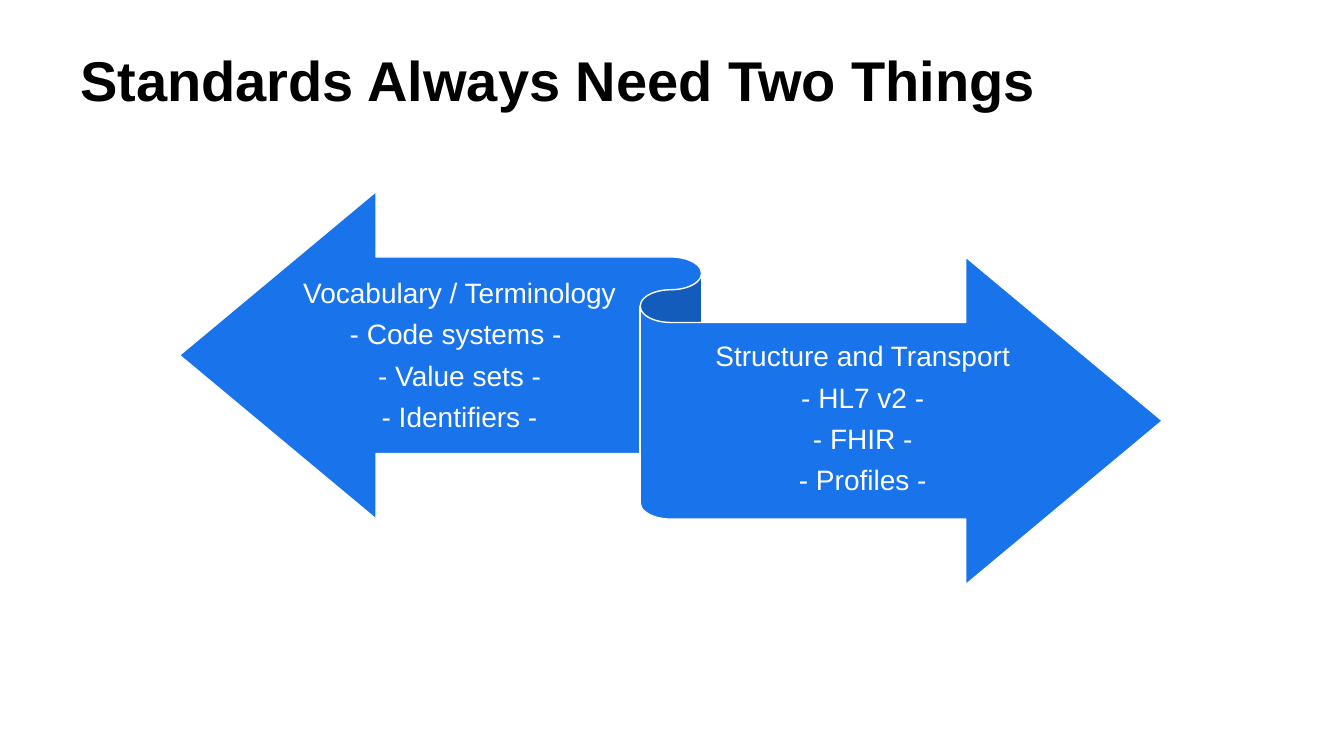
from dataclasses import dataclass

import pptx
import pptx.dml.color
import pptx.enum.shapes
import pptx.enum.text
import pptx.util

Pt = pptx.util.Pt
Align = pptx.enum.text.PP_ALIGN
Anchor = pptx.enum.text.MSO_ANCHOR


@dataclass(frozen=True)
class TextBlock:
    """Lines of text and their look; lengths in points."""
    lines: tuple[str, ...]
    left: float
    top: float
    width: float
    height: float
    size: float = 20
    color: str = "FFFFFF"
    bold: bool = False
    align: Align = Align.CENTER
    anchor: Anchor = Anchor.MIDDLE
    side_inset: float = 0
    end_inset: float = 5.76
    line_spacing: float = 0.9
    space_after: float = 7.9


TITLE = TextBlock(
    ("Standards Always Need Two Things",), 50.4, 28.8, 857.5, 86.4,
    size=40, color="000000", bold=True, align=Align.LEFT, anchor=Anchor.TOP,
    side_inset=7.2, end_inset=3.6, line_spacing=1, space_after=0,
)
ARROW_TEXTS = (
    TextBlock(
        ("Vocabulary / Terminology", "- Code systems - ", "- Value sets -", "- Identifiers -"),
        212.4, 185.8, 231.8, 137.5,
    ),
    TextBlock(
        ("Structure and Transport", "- HL7 v2 -", "- FHIR -", "- Profiles -"),
        479.5, 231.1, 273.6, 137.5,
    ),
)


def rgb(value: str) -> pptx.dml.color.RGBColor:
    return pptx.dml.color.RGBColor.from_string(value)


def set_all(target: object, values: dict[str, object]) -> None:
    for name, value in values.items():
        setattr(target, name, value)


def add_text(shapes, block: TextBlock) -> None:
    box = shapes.add_textbox(Pt(block.left), Pt(block.top), Pt(block.width), Pt(block.height))
    frame = box.text_frame
    set_all(frame, {
        "word_wrap": True,
        "vertical_anchor": block.anchor,
        "margin_left": Pt(block.side_inset),
        "margin_right": Pt(block.side_inset),
        "margin_top": Pt(block.end_inset),
        "margin_bottom": Pt(block.end_inset),
    })
    for index, line in enumerate(block.lines):
        para = frame.add_paragraph() if index else frame.paragraphs[0]
        set_all(para, {
            "alignment": block.align,
            "line_spacing": block.line_spacing,
            "space_after": Pt(block.space_after),
        })
        span = para.add_run()
        span.text = line
        set_all(span.font, {"name": "Arial", "size": Pt(block.size), "bold": block.bold})
        span.font.color.rgb = rgb(block.color)


def add_ribbon(shapes) -> None:
    ribbon = shapes.add_shape(
        pptx.enum.shapes.MSO_SHAPE.LEFT_RIGHT_RIBBON, Pt(128.2), Pt(136.8), Pt(702), Pt(280.8)
    )
    ribbon.shadow.inherit = False
    ribbon.fill.solid()
    ribbon.fill.fore_color.rgb = rgb("1973EB")
    ribbon.line.color.rgb = rgb("FFFFFF")
    ribbon.line.width = Pt(1)


def main() -> None:
    deck = pptx.Presentation()
    set_all(deck, {"slide_width": Pt(960), "slide_height": Pt(540)})
    page = deck.slides.add_slide(deck.slide_layouts[6])
    add_text(page.shapes, TITLE)
    diagram = page.shapes.add_group_shape()
    add_ribbon(diagram.shapes)
    for block in ARROW_TEXTS:
        add_text(diagram.shapes, block)
    deck.save("out.pptx")


if __name__ == "__main__":
    main()
